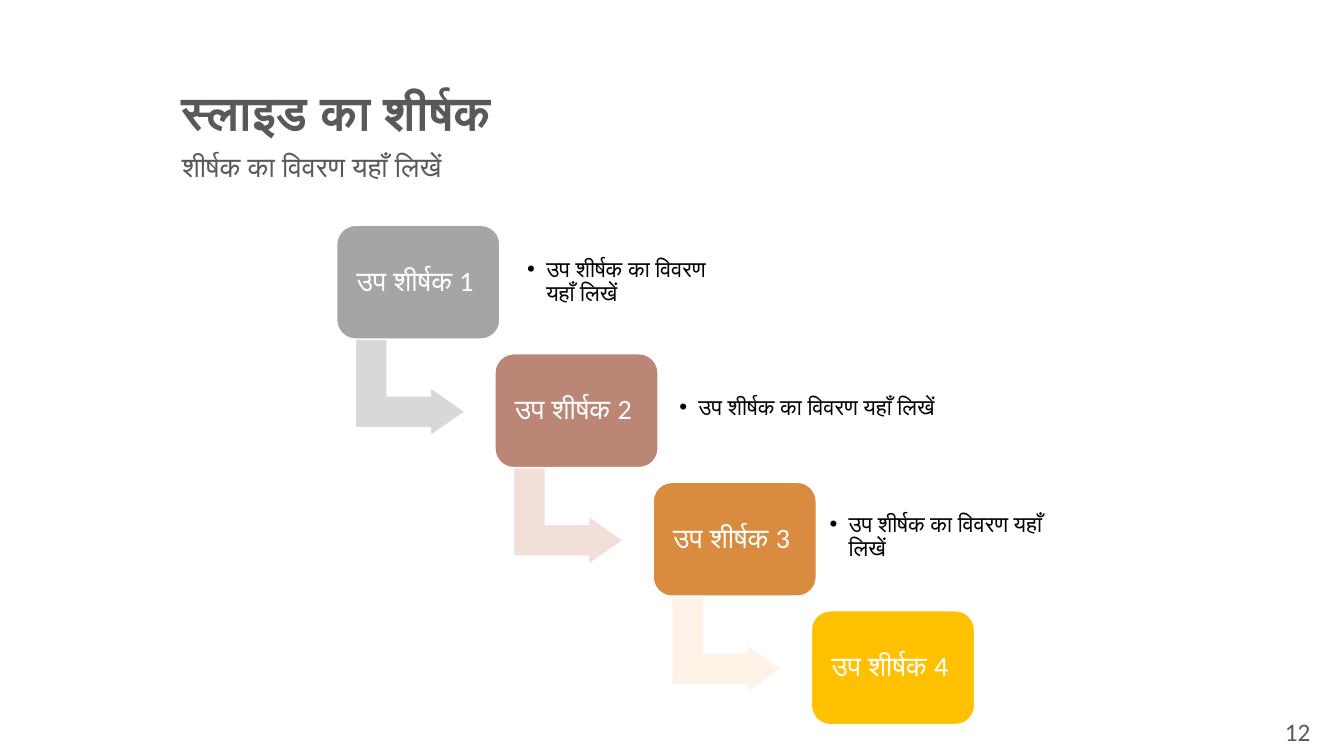
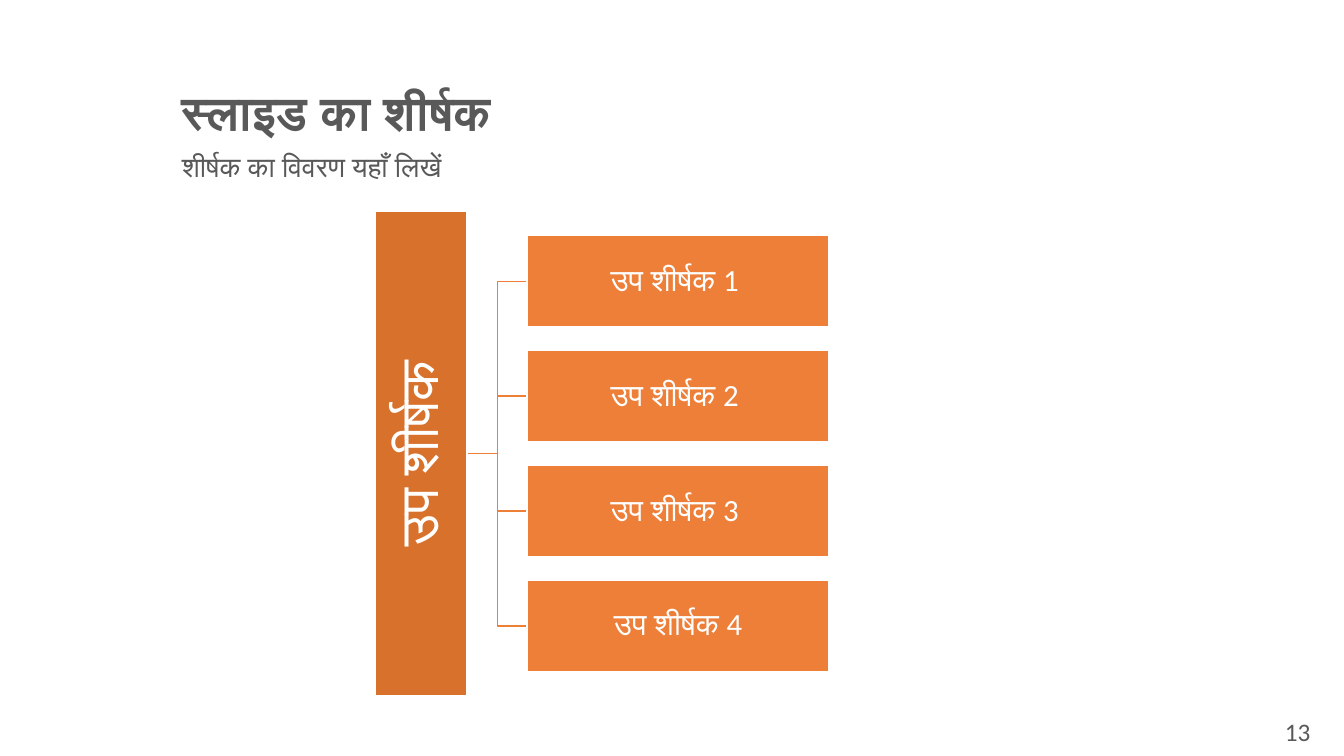
from dataclasses import dataclass

import lxml.etree
import pptx
import pptx.dml.color
import pptx.enum.shapes
import pptx.enum.text
import pptx.oxml.ns
import pptx.shapes.autoshape
import pptx.slide
import pptx.util

EMU_PER_PX = 4572  # 200 px to the inch
SHAPE = pptx.enum.shapes.MSO_SHAPE
ALIGN = pptx.enum.text.PP_ALIGN
ANCHOR = pptx.enum.text.MSO_ANCHOR


@dataclass(frozen=True)
class Theme:
    font: str = "Calibri"
    bullet_font: str = "Arial"
    heading: str = "595959"
    body: str = "000000"
    white: str = "FFFFFF"
    bar: str = "D7712C"
    branch: str = "ED7F39"
    title_size: int = 34
    subtitle_size: int = 20
    number_size: int = 18
    step_size: int = 20
    detail_size: int = 16
    bar_size: int = 39
    branch_size: int = 22


@dataclass(frozen=True)
class Box:
    left: int
    top: int
    width: int
    height: int

    def emu(self) -> tuple[int, ...]:
        return tuple(px(n) for n in (self.left, self.top, self.width, self.height))


@dataclass(frozen=True)
class Step:
    label: str
    fill: str
    arrow_fill: str = ""
    detail_left: int = 0
    detail_top: int = 0
    detail_width: int = 0


THEME = Theme()
TITLE = "स्लाइड का शीर्षक"
SUBTITLE = "शीर्षक का विवरण यहाँ लिखें"
DETAIL = "उप शीर्षक का विवरण यहाँ लिखें"
STEPS = (
    Step("उप शीर्षक 1 ", "A5A5A5", "D8D8D8", 1028, 468, 426),
    Step("उप शीर्षक 2 ", "BB8676", "F2DFD9", 1330, 718, 628),
    Step("उप शीर्षक 3 ", "D98C3F", "FFF2E7", 1628, 974, 524),
    Step("उप शीर्षक 4 ", "FFC000"),
)
BAR_LABEL = "उप शीर्षक"
BRANCH_LABELS = ("उप शीर्षक 1 ", "उप शीर्षक 2 ", "उप शीर्षक 3 ", "उप शीर्षक 4")


def px(length: int) -> int:
    return pptx.util.Emu(length * EMU_PER_PX)


def rgb(color: str) -> pptx.dml.color.RGBColor:
    return pptx.dml.color.RGBColor.from_string(color)


def write_text(shape: pptx.shapes.autoshape.Shape, text: str, *, size: int,
               color: str, bold: bool = False, align: int = ALIGN.LEFT,
               anchor: int = ANCHOR.TOP, inset: tuple[int, int] = (20, 10),
               line_spacing: float = 0.9, bullet: bool = False) -> None:
    frame = shape.text_frame
    frame.word_wrap = True
    frame.vertical_anchor = anchor
    frame.margin_left = frame.margin_right = px(inset[0])
    frame.margin_top = frame.margin_bottom = px(inset[1])
    paragraph = frame.paragraphs[0]
    paragraph.alignment = align
    paragraph.line_spacing = line_spacing
    if bullet:
        properties = paragraph._p.get_or_add_pPr()
        properties.set("marL", str(px(38)))
        properties.set("indent", str(px(-38)))
        for tag, name, value in (("a:buFont", "typeface", THEME.bullet_font),
                                 ("a:buChar", "char", "•")):
            lxml.etree.SubElement(properties, pptx.oxml.ns.qn(tag)).set(name, value)
    run = paragraph.add_run()
    run.text = text
    run.font.size = pptx.util.Pt(size)
    run.font.bold = bold
    run.font.color.rgb = rgb(color)
    run.font.name = THEME.font


def add_text(slide: pptx.slide.Slide, box: Box, text: str, **text_format) -> None:
    write_text(slide.shapes.add_textbox(*box.emu()), text, **text_format)


def add_block(slide: pptx.slide.Slide, kind: int, box: Box, fill: str,
              adjustments: tuple[float, ...] = (),
              rotation: int = 0) -> pptx.shapes.autoshape.Shape:
    shape = slide.shapes.add_shape(kind, *box.emu())
    shape.shadow.inherit = False
    shape.fill.solid()
    shape.fill.fore_color.rgb = rgb(fill)
    shape.line.color.rgb = rgb(THEME.white)
    shape.line.width = pptx.util.Pt(1)
    shape.rotation = rotation
    for index, value in enumerate(adjustments):
        shape.adjustments[index] = value
    return shape


def add_elbow(slide: pptx.slide.Slide, start: tuple[int, int],
              end: tuple[int, int], color: str) -> None:
    """Draw an open line that turns halfway between its two ends."""
    turn = (start[0] + end[0]) // 2
    builder = slide.shapes.build_freeform(*start, scale=EMU_PER_PX)
    builder.add_line_segments([(turn, start[1]), (turn, end[1]), end], close=False)
    elbow = builder.convert_to_shape()
    elbow.shadow.inherit = False
    elbow.fill.background()
    elbow.line.color.rgb = rgb(color)
    elbow.line.width = pptx.util.Pt(1)


def add_base_slide(presentation, number: int) -> pptx.slide.Slide:
    """Add a blank slide with the shared title, subtitle and page number."""
    slide = presentation.slides.add_slide(presentation.slide_layouts[6])
    add_text(slide, Box(341, 168, 1922, 110), TITLE,
             size=THEME.title_size, color=THEME.heading, bold=True)
    add_text(slide, Box(341, 294, 1922, 126), SUBTITLE,
             size=THEME.subtitle_size, color=THEME.heading)
    add_text(slide, Box(2483, 1412, 184, 88), str(number), size=THEME.number_size,
             color=THEME.heading, align=ALIGN.CENTER, line_spacing=1.0)
    return slide


def draw_staircase(slide: pptx.slide.Slide) -> None:
    for index, step in enumerate(STEPS):
        left, top = 668 + 314 * index, 447 + 255 * index
        # Arrow down to the next step
        if step.arrow_fill:
            add_block(slide, SHAPE.BENT_UP_ARROW, Box(left + 50, top + 213, 192, 218),
                      step.arrow_fill, (0.328, 0.25, 0.358), rotation=90)
        # Step card
        card = add_block(slide, SHAPE.ROUNDED_RECTANGLE, Box(left, top, 324, 226),
                         step.fill, (0.167,))
        write_text(card, step.label, size=THEME.step_size, color=THEME.white,
                   align=ALIGN.CENTER, anchor=ANCHOR.MIDDLE, inset=(16, 16))
        # Detail beside the card
        if step.detail_width:
            add_text(slide, Box(step.detail_left, step.detail_top, step.detail_width, 184),
                     DETAIL, size=THEME.detail_size, color=THEME.body,
                     anchor=ANCHOR.MIDDLE, inset=(18, 18), bullet=True)


def draw_hierarchy(slide: pptx.slide.Slide) -> None:
    first_top, pitch, height = 467, 228, 182
    branch_left, elbow_left = 1046, 928
    centers = [first_top + height // 2 + pitch * i for i in range(len(BRANCH_LABELS))]
    middle = (centers[0] + centers[-1]) // 2

    # Elbow lines from the bar to the branches
    for center in reversed(centers):
        add_elbow(slide, (elbow_left, middle), (branch_left, center), THEME.branch)

    # Upright bar
    bar = add_block(slide, SHAPE.RECTANGLE, Box(356, middle - height // 2, 960, height),
                    THEME.bar, rotation=270)
    write_text(bar, BAR_LABEL, size=THEME.bar_size, color=THEME.white,
               align=ALIGN.CENTER, anchor=ANCHOR.MIDDLE, inset=(6, 6))

    # Branches
    for label, center in zip(BRANCH_LABELS, centers):
        box = Box(branch_left, center - height // 2, 599, height)
        branch = add_block(slide, SHAPE.RECTANGLE, box, THEME.branch)
        write_text(branch, label, size=THEME.branch_size, color=THEME.white,
                   align=ALIGN.CENTER, anchor=ANCHOR.MIDDLE, inset=(4, 4))


def main() -> None:
    presentation = pptx.Presentation()
    presentation.slide_width = px(2667)
    presentation.slide_height = px(1500)
    for number, draw in enumerate((draw_staircase, draw_hierarchy), start=12):
        draw(add_base_slide(presentation, number))
    presentation.save("out.pptx")


if __name__ == "__main__":
    main()
